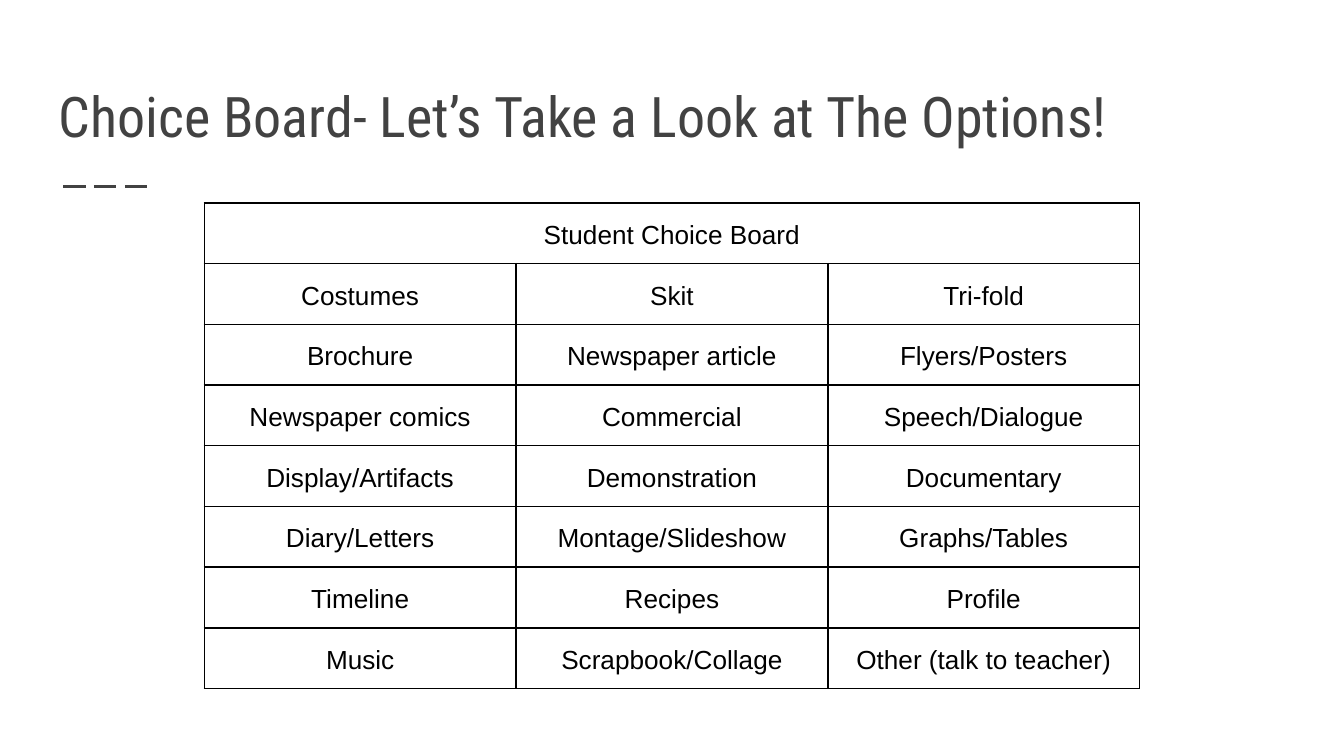
from lxml.etree import SubElement
from pptx import Presentation
from pptx.dml.color import RGBColor
from pptx.enum.dml import MSO_LINE
from pptx.enum.shapes import MSO_CONNECTOR
from pptx.enum.text import MSO_ANCHOR, PP_ALIGN
from pptx.oxml import parse_xml
from pptx.oxml.ns import nsdecls, qn
from pptx.util import Inches, Pt

GRAY = "424242"
BLACK = "000000"
BOARD_TITLE = "Student Choice Board"
OPTIONS = [
    ["Costumes", "Skit", "Tri-fold"],
    ["Brochure", "Newspaper article", "Flyers/Posters"],
    ["Newspaper comics", "Commercial", "Speech/Dialogue"],
    ["Display/Artifacts", "Demonstration", "Documentary"],
    ["Diary/Letters", "Montage/Slideshow", "Graphs/Tables"],
    ["Timeline", "Recipes", "Profile"],
    ["Music", "Scrapbook/Collage", "Other (talk to teacher)"],
]


def color(hex_value):
    """Turn a hex string into a colour."""
    return RGBColor.from_string(hex_value)


def write_text(text_frame, text, *, font, size, fill, align=PP_ALIGN.LEFT, spacing=1.0):
    """Write one formatted paragraph into a text frame."""
    paragraph = text_frame.paragraphs[0]
    paragraph.alignment = align
    paragraph.line_spacing = spacing
    run = paragraph.add_run()
    run.text = text
    run.font.name = font
    run.font.size = Pt(size)
    run.font.color.rgb = color(fill)


def add_title(slide, text):
    """Add the slide title, anchored to the bottom of its box."""
    shape = slide.shapes.add_textbox(Inches(0.34), Inches(0.41), Inches(9.32), Inches(0.8))
    text_frame = shape.text_frame
    text_frame.word_wrap = True
    text_frame.vertical_anchor = MSO_ANCHOR.BOTTOM
    text_frame.margin_left = text_frame.margin_right = Inches(0.1)
    text_frame.margin_top = text_frame.margin_bottom = Inches(0.1)
    write_text(text_frame, text, font="Roboto Condensed", size=30, fill=GRAY)


def add_dashed_rule(slide):
    """Add the short dashed rule below the title."""
    y = Inches(1.39)
    rule = slide.shapes.add_connector(MSO_CONNECTOR.STRAIGHT, Inches(0.47), y, Inches(1.14), y)
    rule.line.color.rgb = color(GRAY)
    rule.line.width = Pt(1.5)
    rule.line.dash_style = MSO_LINE.LONG_DASH
    SubElement(rule._element.spPr, qn("a:effectLst"))


def set_borders(cell, hex_value, width):
    """Draw a solid border on all four sides of a cell."""
    properties = cell._tc.get_or_add_tcPr()
    for index, side in enumerate(("lnL", "lnR", "lnT", "lnB")):
        border = parse_xml(
            f'<a:{side} {nsdecls("a")} w="{Pt(width)}"><a:solidFill>'
            f'<a:srgbClr val="{hex_value}"/></a:solidFill></a:{side}>'
        )
        properties.insert(index, border)


def format_cell(cell):
    """Give a cell its margins, clear fill and border."""
    cell.margin_left = cell.margin_right = Inches(0.07)
    cell.margin_top = Inches(0.1)
    cell.margin_bottom = Inches(1 / 12)
    cell.fill.background()
    set_borders(cell, BLACK, 1)


def add_choice_board(slide, title, options):
    """Add the table of options under a merged heading row."""
    rows = [[title]] + options
    row_height, column_width = Inches(0.39), Inches(2.32)
    column_count = len(options[0])
    table = slide.shapes.add_table(
        len(rows), column_count, Inches(1.52), Inches(1.51),
        column_width * column_count, row_height * len(rows),
    ).table
    table.first_row = table.horz_banding = False
    for cell in table.iter_cells():
        format_cell(cell)
    table.cell(0, 0).merge(table.cell(0, column_count - 1))
    for row_index, row in enumerate(rows):
        for column_index, text in enumerate(row):
            write_text(
                table.cell(row_index, column_index).text_frame, text,
                font="Arial", size=14, fill=BLACK, align=PP_ALIGN.CENTER, spacing=1.15,
            )


def main():
    """Build and save the slide."""
    presentation = Presentation()
    presentation.slide_width = Inches(10)
    presentation.slide_height = Inches(10 * 9 / 16)
    slide = presentation.slides.add_slide(presentation.slide_layouts[6])
    add_dashed_rule(slide)
    add_title(slide, "Choice Board- Let’s Take a Look at The Options!")
    add_choice_board(slide, BOARD_TITLE, OPTIONS)
    presentation.save("out.pptx")


if __name__ == "__main__":
    main()
